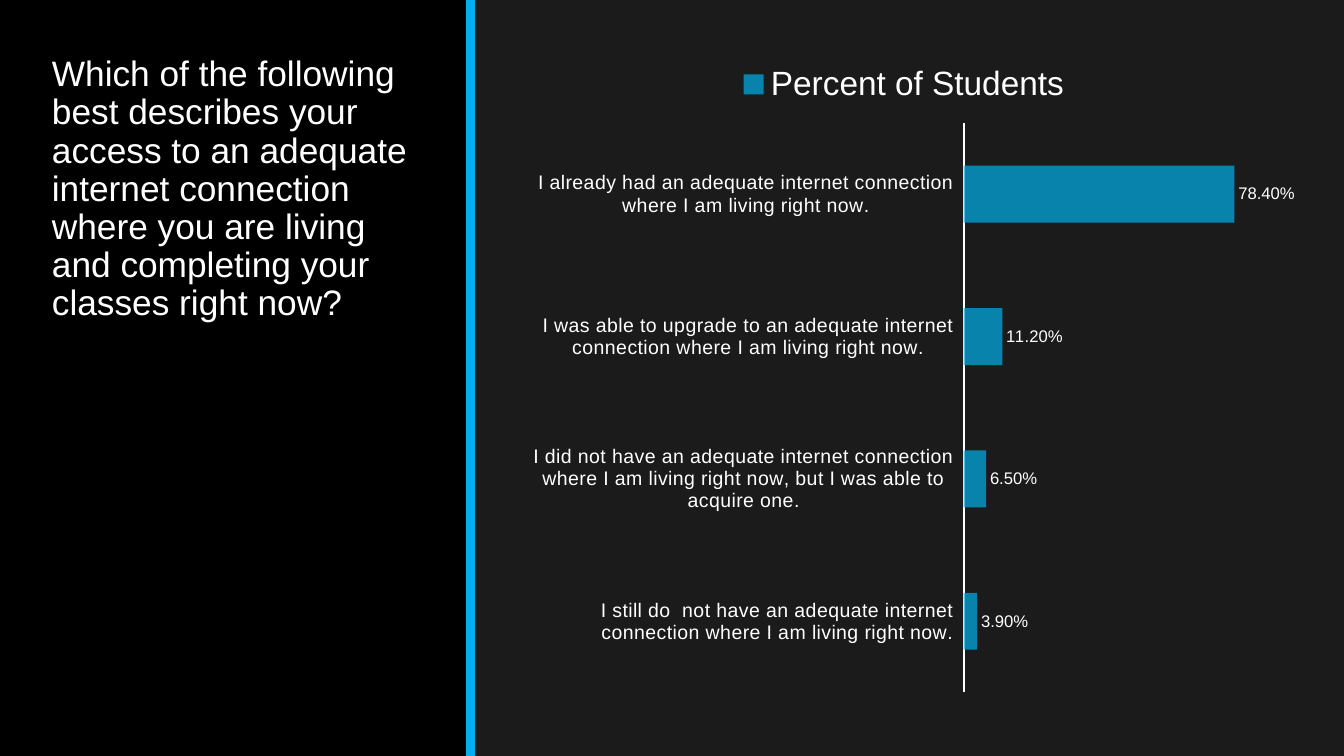
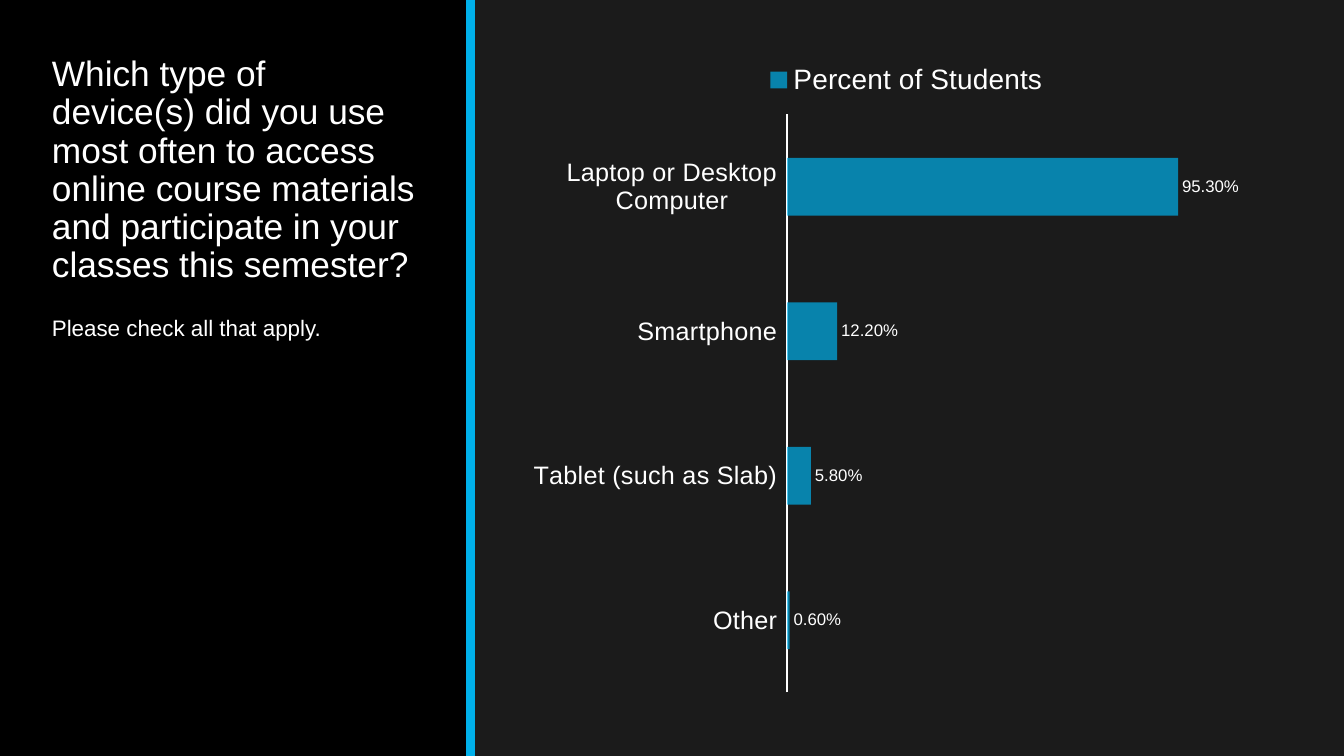
from lxml import etree
from pptx import Presentation
from pptx.chart.data import CategoryChartData
from pptx.dml.color import RGBColor
from pptx.enum.chart import (XL_CHART_TYPE, XL_LABEL_POSITION, XL_LEGEND_POSITION,
                             XL_TICK_LABEL_POSITION, XL_TICK_MARK)
from pptx.enum.shapes import MSO_CONNECTOR, MSO_SHAPE
from pptx.enum.text import MSO_ANCHOR
from pptx.oxml.ns import qn
from pptx.util import Pt

BAR = XL_CHART_TYPE.BAR_CLUSTERED
OUTSIDE_END = XL_LABEL_POSITION.OUTSIDE_END
LEGEND_TOP = XL_LEGEND_POSITION.TOP
LABELS_LOW = XL_TICK_LABEL_POSITION.LOW
NO_TICK = XL_TICK_MARK.NONE
RECTANGLE = MSO_SHAPE.RECTANGLE
STRAIGHT = MSO_CONNECTOR.STRAIGHT
TOP, BOTTOM = MSO_ANCHOR.TOP, MSO_ANCHOR.BOTTOM

COLORS = {"background": "1B1B1B", "panel": "000000", "accent": "00B0EA", "text": "FFFFFF"}
FONT = "Arial"
PERCENT = "0.00%"
SLIDE_WIDTH, SLIDE_HEIGHT = 960, 540
PANEL_WIDTH = 336
TITLE_AREA = (30, 36.7, 276, 126)
NOTE_AREA = (30, 56.2, 276, 190.8)
CHART_AREA = (370, 36.7, 555, 467.3)

TITLE = {"size": 25.2, "anchor": TOP, "paragraph": {"line_spacing": 0.9}}
NOTE = {"size": 16, "anchor": BOTTOM, "paragraph": {"space_before": Pt(12)}}

QUESTIONS = [
    {
        "title": "Which of the following best describes your access to an adequate internet "
                 "connection where you are living and completing your classes right now?",
        "note": None,
        "answers": {
            "I still do  not have an adequate internet connection where I am living right now.":
                0.039,
            "I did not have an adequate internet connection where I am living right now, "
            "but I was able to acquire one.": 0.065,
            "I was able to upgrade to an adequate internet connection where I am living "
            "right now.": 0.112,
            "I already had an adequate internet connection where I am living right now.": 0.784,
        },
        "category_size": 14,
        "legend_size": 24,
    },
    {
        "title": "Which type of device(s) did you use most often to access online course "
                 "materials and participate in your classes this semester?",
        "note": "Please check all that apply.",
        "answers": {
            "Other": 0.006,
            "Tablet (such as Slab)": 0.058,
            "Smartphone": 0.122,
            "Laptop or Desktop Computer": 0.953,
        },
        "category_size": 18,
        "legend_size": 20,
    },
]


def color(name):
    return RGBColor.from_string(COLORS[name])


def points(values):
    return [Pt(value) for value in values]


def set_attributes(target, values):
    for name, value in values.items():
        setattr(target, name, value)


def paint(fill, name):
    fill.solid()
    fill.fore_color.rgb = color(name)


def style_font(font, size):
    set_attributes(font, {"name": FONT, "size": Pt(size), "bold": False})
    font.color.rgb = color("text")


def add_side_panel(page):
    """Black panel on the left with an accent line along its right edge."""
    paint(page.background.fill, "background")
    panel = page.shapes.add_shape(RECTANGLE, *points((0, 0, PANEL_WIDTH, SLIDE_HEIGHT)))
    panel.shadow.inherit = False
    paint(panel.fill, "panel")
    panel.line.fill.background()

    edge = page.shapes.add_connector(
        STRAIGHT, *points((PANEL_WIDTH, 0, PANEL_WIDTH, SLIDE_HEIGHT)))
    edge.line.color.rgb = color("accent")
    edge.line.width = Pt(6)
    etree.SubElement(edge._element.spPr, qn("a:effectLst"))


def add_text(page, area, text, style):
    frame = page.shapes.add_textbox(*points(area)).text_frame
    set_attributes(frame, {"word_wrap": True, "vertical_anchor": style["anchor"]})
    para = frame.paragraphs[0]
    set_attributes(para, style["paragraph"])
    span = para.add_run()
    span.text = text
    style_font(span.font, style["size"])


def style_axes(chart, category_size):
    axis = chart.category_axis
    set_attributes(axis, {"major_tick_mark": NO_TICK, "minor_tick_mark": NO_TICK,
                          "has_major_gridlines": False})
    axis.format.line.color.rgb = color("text")
    axis.format.line.width = Pt(1.25)
    axis.tick_label_position = LABELS_LOW
    labels = axis.tick_labels
    style_font(labels.font, category_size)
    labels.font._element.set("spc", "20")

    set_attributes(chart.value_axis, {"visible": False, "has_major_gridlines": False})


def style_bars(chart):
    plot = chart.plots[0]
    set_attributes(plot, {"gap_width": 150, "overlap": -25, "vary_by_categories": False})
    bars = plot.series[0]
    paint(bars.format.fill, "accent")
    tint = bars.format.fill._xPr.find(".//" + qn("a:srgbClr"))
    etree.SubElement(tint, qn("a:alpha"), val="70000")

    labels = bars.data_labels
    set_attributes(labels, {"show_value": True, "number_format": PERCENT,
                            "number_format_is_linked": False, "position": OUTSIDE_END})
    style_font(labels.font, 12)


def add_answer_chart(page, answers, category_size, legend_size):
    data = CategoryChartData(number_format=PERCENT)
    data.categories = list(answers)
    data.add_series("Percent of Students", list(answers.values()))
    chart = page.shapes.add_chart(BAR, *points(CHART_AREA), data).chart
    set_attributes(chart, {"has_title": False, "has_legend": True})
    style_font(chart.font, 10)
    set_attributes(chart.legend, {"position": LEGEND_TOP, "include_in_layout": False})
    style_font(chart.legend.font, legend_size)
    style_axes(chart, category_size)
    style_bars(chart)


def add_question(deck, question):
    page = deck.slides.add_slide(deck.slide_layouts[6])
    add_side_panel(page)
    add_text(page, TITLE_AREA, question["title"], TITLE)
    if question["note"]:
        add_text(page, NOTE_AREA, question["note"], NOTE)
    add_answer_chart(page, question["answers"], question["category_size"],
                     question["legend_size"])


def main():
    deck = Presentation()
    set_attributes(deck, {"slide_width": Pt(SLIDE_WIDTH), "slide_height": Pt(SLIDE_HEIGHT)})
    for question in QUESTIONS:
        add_question(deck, question)
    deck.save("out.pptx")


if __name__ == "__main__":
    main()
